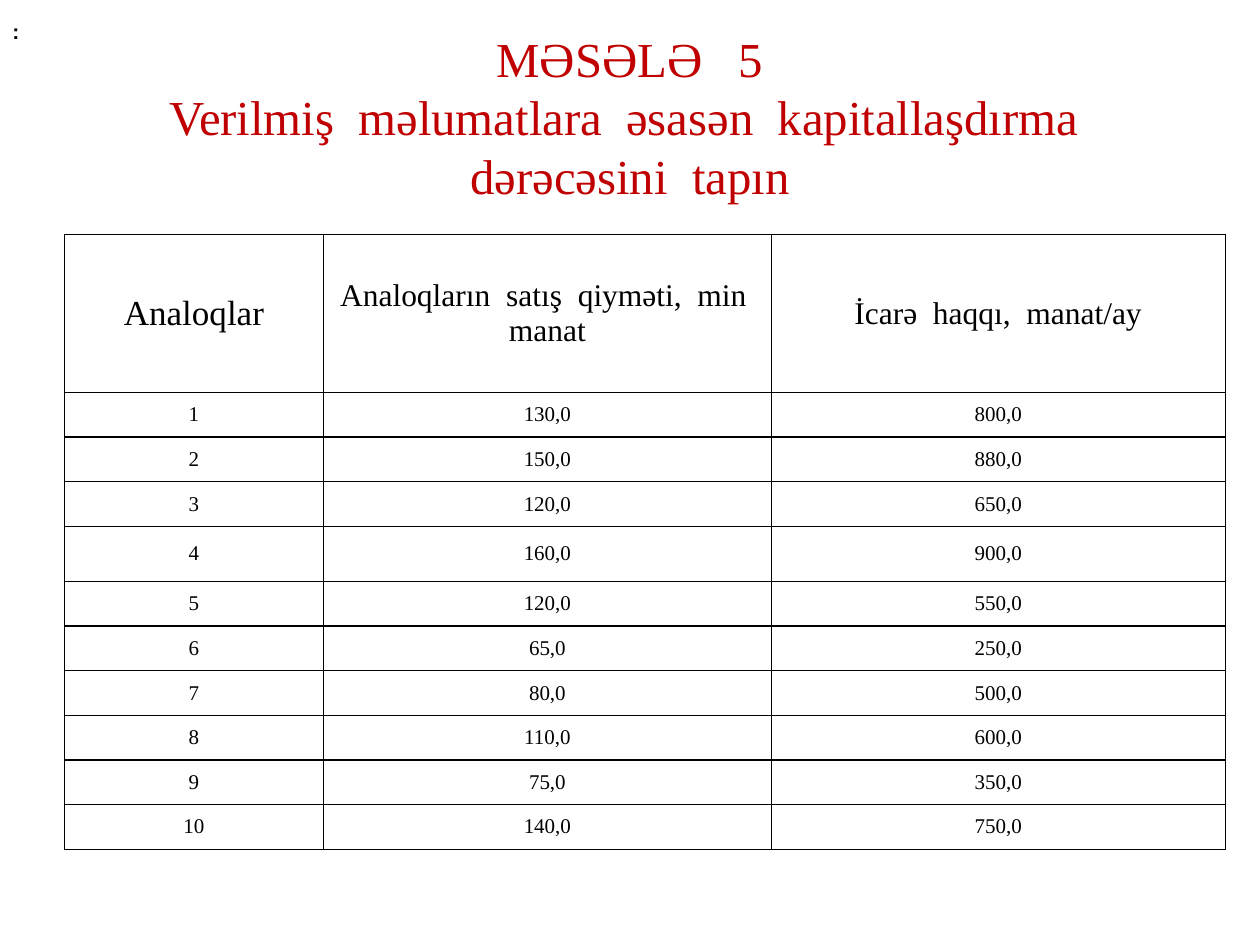
import pptx
import pptx.dml.color
import pptx.enum.text
import pptx.oxml
import pptx.oxml.ns
import pptx.util

Cm = pptx.util.Cm
Pt = pptx.util.Pt
MIDDLE = pptx.enum.text.MSO_ANCHOR.MIDDLE
CENTER = pptx.enum.text.PP_ALIGN.CENTER

COLOURS = {"title": "C00000", "text": "000000", "border": "000000"}
SERIF = "Times New Roman"

HEADERS = [
    ("Analoqlar", 20),
    ("Analoqların  satış  qiyməti,  min  manat", 18),
    ("İcarə  haqqı,  manat/ay", 18),
]
# Sale price and monthly rent of each comparable
ANALOGUES = [
    ("130,0", "800,0"),
    ("150,0", "880,0"),
    ("120,0", "650,0"),
    ("160,0", "900,0"),
    ("120,0", "550,0"),
    ("65,0", "250,0"),
    ("80,0", "500,0"),
    ("110,0", "600,0"),
    ("75,0", "350,0"),
    ("140,0", "750,0"),
]
COLUMN_WIDTHS = [5.22, 9.03, 9.15]
ROW_HEIGHTS = [3.18] + [0.9] * 3 + [1.11] + [0.9] * 6


def style_font(para, size, name, colour, bold=False):
    para.font.size = Pt(size)
    para.font.name = name
    para.font.bold = bold
    para.font.color.rgb = pptx.dml.color.RGBColor.from_string(COLOURS[colour])


def add_text(page, left, top, width, height):
    box = page.shapes.add_textbox(Cm(left), Cm(top), Cm(width), Cm(height))
    box.text_frame.vertical_anchor = MIDDLE
    return box.text_frame


def add_title(page, left, top, width, height):
    frame = add_text(page, left, top, width, height)
    frame.word_wrap = True
    para = frame.paragraphs[0]
    para.text = (
        "MƏSƏLƏ   5\v"
        "Verilmiş  məlumatlara  əsasən  kapitallaşdırma  dərəcəsini  tapın"
    )
    para.alignment = CENTER
    para.line_spacing = Pt(33.4)
    style_font(para, 27.9, SERIF, "title")


def add_colon(page, left, top, width, height):
    frame = add_text(page, left, top, width, height)
    frame.word_wrap = False
    para = frame.paragraphs[0]
    para.text = ":"
    style_font(para, 12, "Arial", "text", bold=True)


def add_borders(cell):
    properties = cell._tc.get_or_add_tcPr()
    for side in ("lnL", "lnR", "lnT", "lnB"):
        properties.append(pptx.oxml.parse_xml(
            f'<a:{side} {pptx.oxml.ns.nsdecls("a")} w="{Pt(1)}"><a:solidFill>'
            f'<a:srgbClr val="{COLOURS["border"]}"/></a:solidFill></a:{side}>'
        ))


def fill_cell(cell, text, size):
    add_borders(cell)
    cell.fill.background()
    cell.vertical_anchor = MIDDLE
    cell.margin_left = cell.margin_right = Cm(0.18)
    cell.margin_top = cell.margin_bottom = 0
    para = cell.text_frame.paragraphs[0]
    para.text = text
    para.alignment = CENTER
    style_font(para, size, SERIF, "text")


def add_analogue_table(page, left, top):
    rows = [HEADERS]
    for number, values in enumerate(ANALOGUES, 1):
        rows.append([(text, 12) for text in (str(number), *values)])
    table = page.shapes.add_table(
        len(rows), len(HEADERS), Cm(left), Cm(top),
        Cm(sum(COLUMN_WIDTHS)), Cm(sum(ROW_HEIGHTS)),
    ).table
    table.first_row = table.horz_banding = False
    for column, width in zip(table.columns, COLUMN_WIDTHS):
        column.width = Cm(width)
    for row, height, entries in zip(table.rows, ROW_HEIGHTS, rows):
        row.height = Cm(height)
        for cell, (text, size) in zip(row.cells, entries):
            fill_cell(cell, text, size)


def main():
    deck = pptx.Presentation()
    deck.slide_width, deck.slide_height = Cm(25.4), Cm(19.05)
    page = deck.slides.add_slide(deck.slide_layouts[6])
    # Heading, table and the stray colon in the corner
    add_title(page, 1.27, 0.76, 22.86, 3.18)
    add_analogue_table(page, 1.3, 4.73)
    add_colon(page, 0, 0.25, 0.66, 0.76)
    deck.save("out.pptx")


if __name__ == "__main__":
    main()
